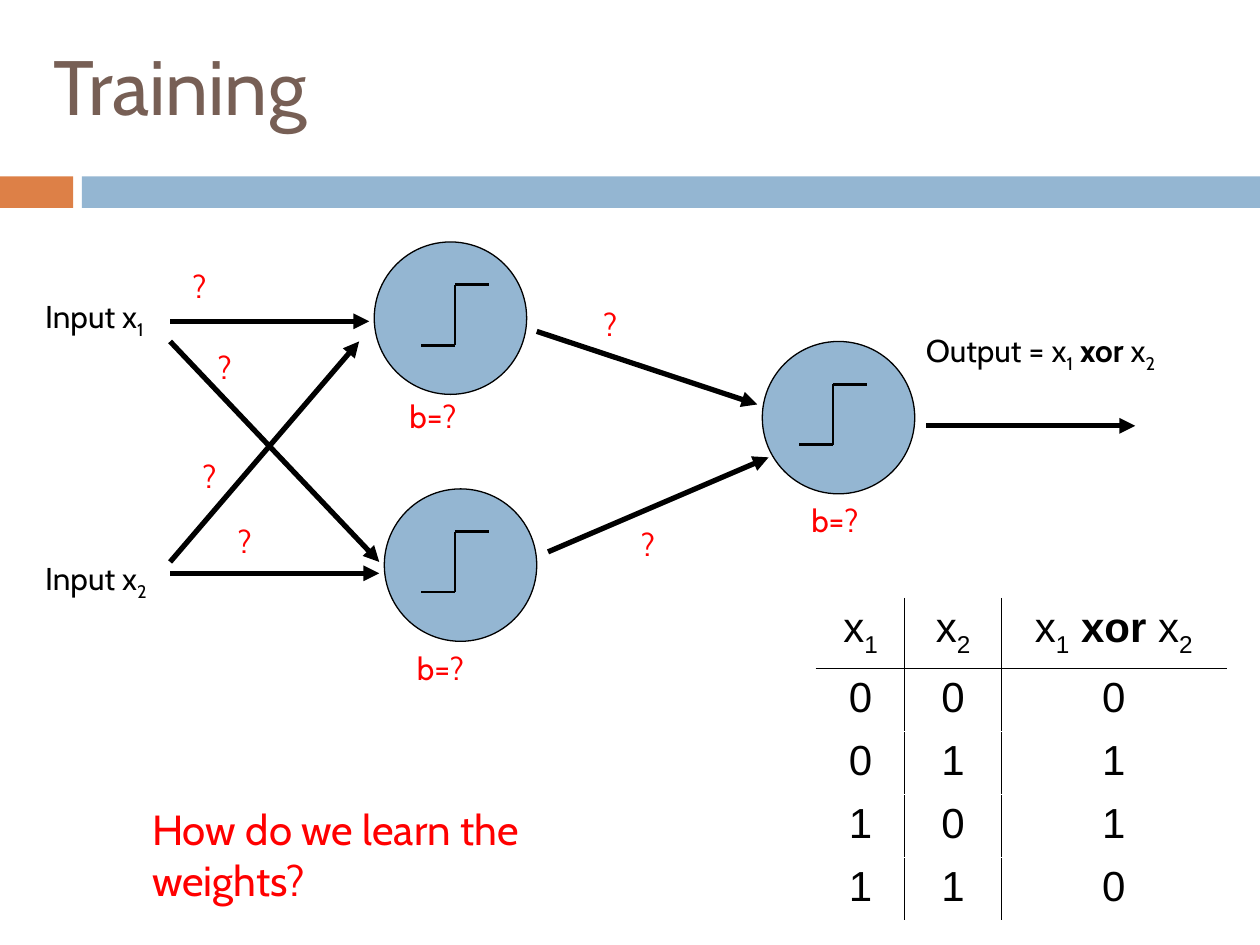
"""Build the Training slide: a two-layer xor network with unknown weights and its truth table."""
from lxml.etree import SubElement
from pptx import Presentation
from pptx.dml.color import RGBColor
from pptx.enum.shapes import MSO_CONNECTOR as CONN, MSO_SHAPE as SHAPE
from pptx.enum.text import MSO_ANCHOR as ANCHOR, PP_ALIGN as ALIGN
from pptx.oxml import parse_xml
from pptx.oxml.ns import nsdecls, qn
from pptx.util import Inches, Pt

COLORS = {"orange": "DD8047", "blue": "94B6D2", "brown": "775F55",
          "black": "000000", "red": "FF0000"}
X1 = [("x", ""), ("1", "sub")]
X2 = [("x", ""), ("2", "sub")]
XOR = X1 + [(" xor ", "bold")] + X2

BARS = [(0, 0.58, "orange"), (0.65, 9.35, "blue")]
NEURONS = [(2.97, 1.92), (6.05, 2.71), (3.05, 3.88)]
STEPS = [(3.61, 2.26), (3.61, 4.22), (6.61, 3.05)]
STEP_HALF, STEP_RISE = 0.27, 0.48
ARROWS = [
    (1.35, 2.55, 2.93, 2.55), (1.35, 2.71, 3.01, 4.46),
    (1.35, 4.55, 3.01, 4.55), (1.35, 4.46, 2.85, 2.71),
    (4.26, 2.63, 6.01, 3.21), (4.35, 4.38, 6.1, 3.63),
    (7.35, 3.38, 9.01, 3.38),
]
LABELS = [
    (0.26, 2.31, 1.25, [("Input ", "")] + X1),
    (0.26, 4.39, 1.25, [("Input ", "")] + X2),
    (7.25, 2.58, 2.2, [("Output = ", "")] + XOR),
]
WEIGHTS = [(1.43, 1.99), (1.63, 2.63), (1.51, 3.5), (1.79, 4.01), (4.69, 2.29), (4.99, 4.04)]
BIASES = [(3.15, 3.1), (3.21, 5.1), (6.34, 3.93)]
TABLE = [[X1, X2, XOR]] + [
    [[(v, "")] for v in row] for row in ("000", "011", "101", "110")]
COL_WIDTHS = [0.7, 0.77, 1.78]
ROW_HEIGHTS = [0.55] + [0.5] * 4


def rgb(name):
    return RGBColor.from_string(COLORS[name])


def add_runs(p, runs, size, color, font="Cabin"):
    for text, style in runs:
        r = p.add_run()
        r.text = text
        for key, value in {"size": Pt(size), "name": font, "bold": style == "bold"}.items():
            setattr(r.font, key, value)
        r.font.color.rgb = rgb(color)
        if style == "sub":
            r.font._element.set("baseline", "-25000")


def add_text(s, x, y, w, h, runs, size=18, color="black", **frame):
    tf = s.shapes.add_textbox(*map(Inches, (x, y, w, h))).text_frame
    for key, value in {"word_wrap": True, **frame}.items():
        setattr(tf, key, value)
    add_runs(tf.paragraphs[0], runs, size, color)


def add_solid(s, kind, x, y, w, h, color, outline=None):
    sp = s.shapes.add_shape(kind, *map(Inches, (x, y, w, h)))
    sp.shadow.inherit = False
    sp.fill.solid()
    sp.fill.fore_color.rgb = rgb(color)
    if outline:
        sp.line.color.rgb = rgb(outline)
        sp.line.width = Pt(0.75)
    else:
        sp.line.fill.background()


def add_line(s, points, width, arrow=False):
    c = s.shapes.add_connector(CONN.STRAIGHT, *map(Inches, points))
    c.line.color.rgb = rgb("black")
    c.line.width = Pt(width)
    if arrow:
        SubElement(c.line._get_or_add_ln(), qn("a:tailEnd"), type="triangle")
    SubElement(c._element.spPr, qn("a:effectLst"))


def add_borders(cell, sides):
    tc_pr = cell._tc.get_or_add_tcPr()
    for i, side in enumerate(sides):
        tc_pr.insert(i, parse_xml(
            f'<a:ln{side} {nsdecls("a")} w="12700"><a:solidFill>'
            f'<a:srgbClr val="{COLORS["black"]}"/></a:solidFill></a:ln{side}>'))


def add_truth_table(s, x, y):
    frame = s.shapes.add_table(len(TABLE), len(COL_WIDTHS), Inches(x), Inches(y),
                               Inches(sum(COL_WIDTHS)), Inches(sum(ROW_HEIGHTS)))
    table = frame.table
    table.first_row = table.horz_banding = False
    for col, width in zip(table.columns, COL_WIDTHS):
        col.width = Inches(width)
    for i, (row, height) in enumerate(zip(TABLE, ROW_HEIGHTS)):
        table.rows[i].height = Inches(height)
        for j, runs in enumerate(row):
            cell = table.cell(i, j)
            cell.fill.background()
            sides = {"L": j > 0, "R": j < len(row) - 1, "T": i == 1, "B": i == 0}
            add_borders(cell, [side for side, shown in sides.items() if shown])
            p = cell.text_frame.paragraphs[0]
            p.alignment = ALIGN.CENTER
            add_runs(p, runs, 24, "black", "Arial")


def main():
    prs = Presentation()
    prs.slide_width, prs.slide_height = Inches(10), Inches(7.5)
    s = prs.slides.add_slide(prs.slide_layouts[6])
    for x, w, color in BARS:
        add_solid(s, SHAPE.RECTANGLE, x, 1.4, w, 0.25, color)
    add_text(s, 0.33, -0.08, 9, 1.5, [("Training", "")], 44, "brown",
             vertical_anchor=ANCHOR.MIDDLE)
    for x, y in NEURONS:
        add_solid(s, SHAPE.OVAL, x, y, 1.21, 1.21, "blue", "black")
    for points in ARROWS:
        add_line(s, points, 3, arrow=True)
    add_truth_table(s, 6.48, 4.75)
    for x, top in STEPS:
        bottom = top + STEP_RISE
        add_line(s, (x + STEP_HALF, top, x, top), 1.5)
        add_line(s, (x, top, x, bottom), 1.5)
        add_line(s, (x, bottom, x - STEP_HALF, bottom), 1.5)
    for x, y, w, runs in LABELS:
        add_text(s, x, y, w, 0.4, runs)
    for x, y in WEIGHTS:
        add_text(s, x, y, 0.32, 0.51, [("?", "")], color="red", margin_top=Inches(0.13))
    for x, y in BIASES:
        add_text(s, x, y, 0.61, 0.4, [("b=?", "")], color="red")
    add_text(s, 1.11, 6.33, 4.22, 0.5, [("How do we learn the weights?", "")], 24, "red")
    prs.save("out.pptx")


if __name__ == "__main__":
    main()
